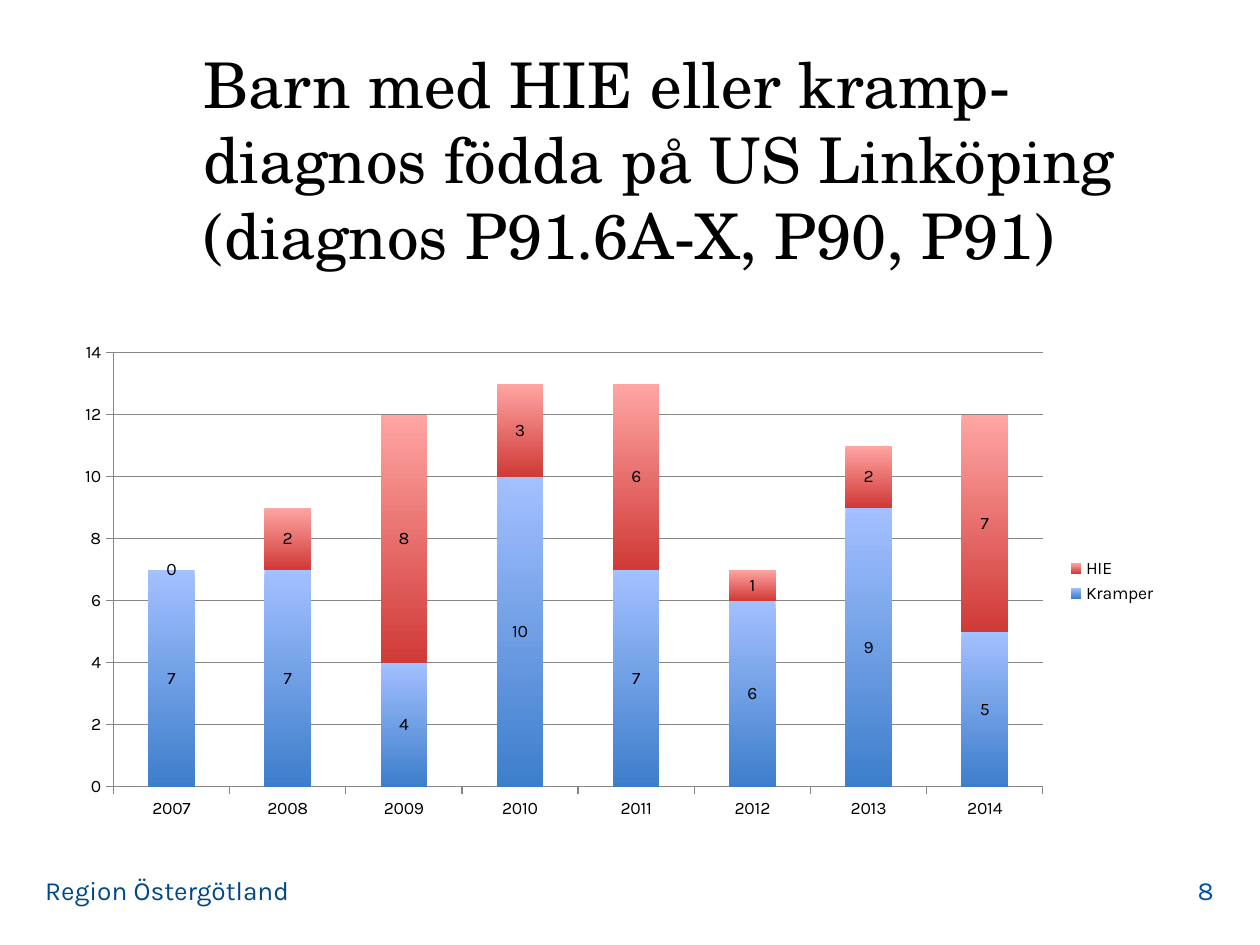
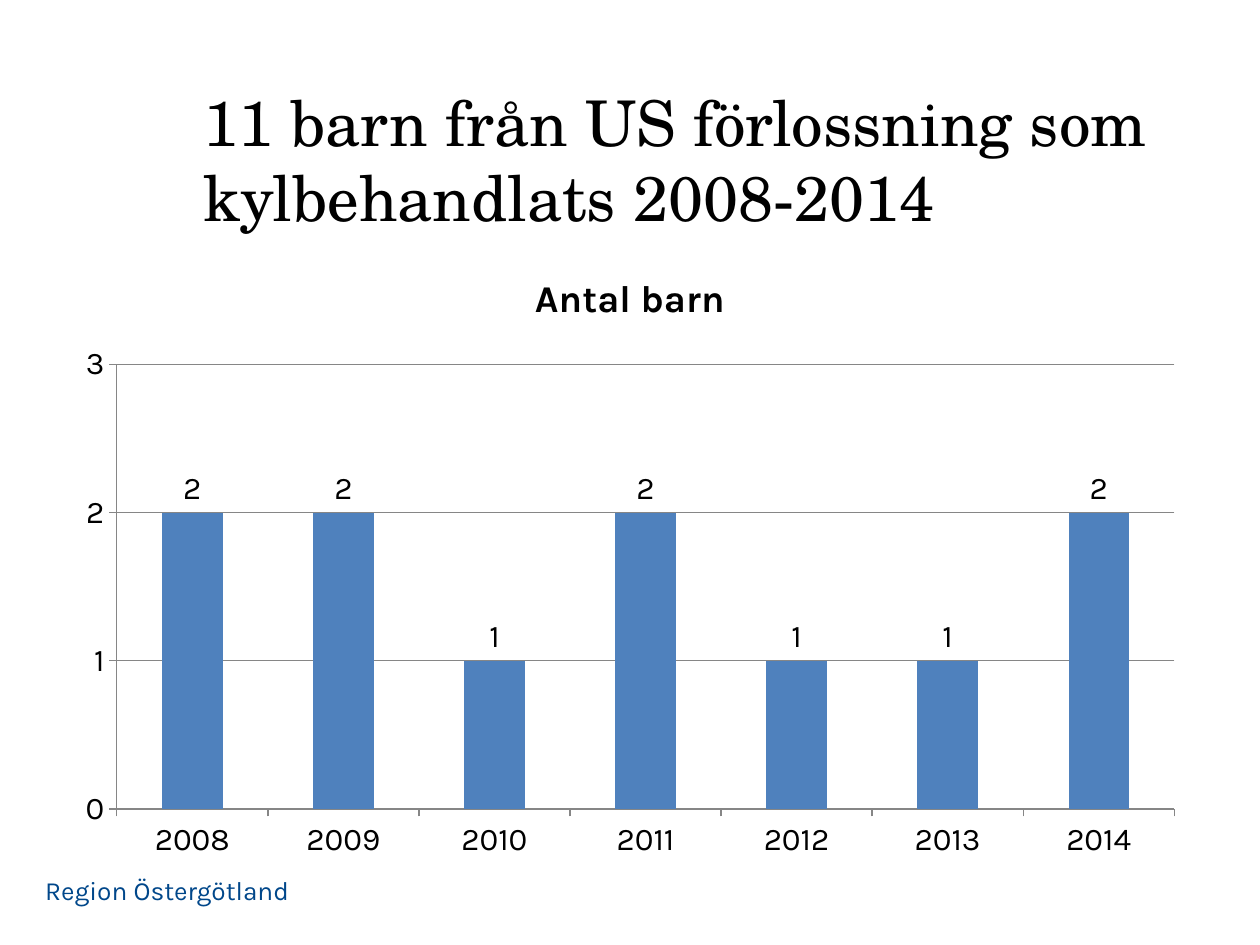
from pptx import Presentation
from pptx.chart.data import CategoryChartData
from pptx.dml.color import RGBColor
from pptx.enum import chart as ch, text
from pptx.util import Cm, Pt

BODY_FONT = "Karla"
TITLE_FONT = "TeX Gyre Schola"
BLACK = RGBColor(0x00, 0x00, 0x00)
FOOTER_BLUE = RGBColor(0x00, 0x47, 0x8A)
NUMBER_BLUE = RGBColor(0x00, 0x50, 0xA5)
AXIS_GREY = RGBColor(0x86, 0x86, 0x86)
BAR_BLUE = RGBColor(0x4F, 0x81, 0xBD)
BLUE_GRADIENT = (RGBColor(0xA3, 0xC0, 0xFF), RGBColor(0x3D, 0x7E, 0xCB))
RED_GRADIENT = (RGBColor(0xFF, 0xA5, 0xA3), RGBColor(0xD0, 0x3A, 0x37))


def style_font(font, name, size, color, bold=False):
    font.name = name
    font.size = Pt(size)
    font.bold = bold
    font.color.rgb = color


def add_label(slide, wording, box, color, align, anchor):
    frame = slide.shapes.add_textbox(*box).text_frame
    frame.word_wrap = True
    frame.vertical_anchor = anchor
    frame.text = wording
    paragraph = frame.paragraphs[0]
    paragraph.alignment = align
    style_font(paragraph.font, BODY_FONT, 15, color)


def add_titled_slide(prs, wording):
    slide = prs.slides.add_slide(prs.slide_layouts[5])
    title = slide.shapes.title
    title.left, title.top, title.width, title.height = Cm(3.84), Cm(1.45), Cm(19.71), Cm(3.5)
    frame = title.text_frame
    frame.text = wording
    frame.word_wrap = True
    frame.auto_size = text.MSO_AUTO_SIZE.NONE
    frame.vertical_anchor = text.MSO_ANCHOR.MIDDLE
    for paragraph in frame.paragraphs:
        paragraph.alignment = text.PP_ALIGN.LEFT
        style_font(paragraph.font, TITLE_FONT, 36, BLACK)
    add_label(slide, "Region Östergötland", (Cm(0.66), Cm(17.5), Cm(9.35), Cm(0.89)),
              FOOTER_BLUE, text.PP_ALIGN.LEFT, text.MSO_ANCHOR.TOP)
    return slide


def add_page_number(slide, number):
    add_label(slide, number, (Cm(23.32), Cm(17.37), Cm(1.4), Cm(1.02)),
              NUMBER_BLUE, text.PP_ALIGN.RIGHT, text.MSO_ANCHOR.BOTTOM)


def style_axis(axis):
    axis.major_tick_mark = ch.XL_TICK_MARK.OUTSIDE
    axis.minor_tick_mark = ch.XL_TICK_MARK.NONE
    axis.format.line.color.rgb = AXIS_GREY
    axis.format.line.width = Pt(0.75)


def add_column_chart(slide, kind, box, years, counts, size, top, step, label_position):
    data = CategoryChartData()
    data.categories = [str(year) for year in years]
    for name, values in counts.items():
        data.add_series(name, values)
    chart = slide.shapes.add_chart(kind, *box, data).chart
    style_font(chart.font, BODY_FONT, size, BLACK)
    chart.has_title = False
    chart.has_legend = False

    style_axis(chart.category_axis)
    counts_axis = chart.value_axis
    style_axis(counts_axis)
    counts_axis.minimum_scale = 0
    counts_axis.maximum_scale = top
    counts_axis.major_unit = step
    counts_axis.has_major_gridlines = True
    gridline = counts_axis.major_gridlines.format.line
    gridline.color.rgb = AXIS_GREY
    gridline.width = Pt(0.75)

    plot = chart.plots[0]
    plot.gap_width = 150
    plot.vary_by_categories = False
    for series in plot.series:
        series.invert_if_negative = False
        labels = series.data_labels
        labels.show_value = True
        labels.position = label_position
        style_font(labels.font, BODY_FONT, size, BLACK)
    return chart


def fill_gradient(series, colors):
    fill = series.format.fill
    fill.gradient()
    fill.gradient_angle = 270
    for stop, color in zip(fill.gradient_stops, colors):
        stop.color.rgb = color


def add_legend(chart):
    chart.has_legend = True
    chart.legend.position = ch.XL_LEGEND_POSITION.RIGHT
    chart.legend.include_in_layout = False
    style_font(chart.legend.font, BODY_FONT, 10, BLACK)


def add_chart_title(chart, wording):
    chart.has_title = True
    frame = chart.chart_title.text_frame
    frame.text = wording
    style_font(frame.paragraphs[0].font, BODY_FONT, 21.6, BLACK, bold=True)
    chart.chart_title.include_in_layout = False


def build_diagnoses(prs):
    slide = add_titled_slide(
        prs, "Barn med HIE eller kramp-diagnos födda på US Linköping\v(diagnos P91.6A-X, P90, P91)")
    add_page_number(slide, "8")
    diagnoses = {"Kramper": (7, 7, 4, 10, 7, 6, 9, 5), "HIE": (0, 2, 8, 3, 6, 1, 2, 7)}
    chart = add_column_chart(
        slide, ch.XL_CHART_TYPE.COLUMN_STACKED, (Cm(1.27), Cm(6.71), Cm(22.3), Cm(10)),
        range(2007, 2015), diagnoses, 10, 14, 2, ch.XL_LABEL_POSITION.CENTER)
    chart.plots[0].overlap = 100
    for series, colors in zip(chart.plots[0].series, (BLUE_GRADIENT, RED_GRADIENT)):
        fill_gradient(series, colors)
    add_legend(chart)


def build_cooling(prs):
    slide = add_titled_slide(prs, "11 barn från US förlossning som kylbehandlats 2008-2014")
    chart = add_column_chart(
        slide, ch.XL_CHART_TYPE.COLUMN_CLUSTERED, (Cm(1.27), Cm(4.98), Cm(22.86), Cm(12.57)),
        range(2008, 2015), {"Antal barn": (2, 2, 1, 2, 1, 1, 2)}, 18, 3, 1,
        ch.XL_LABEL_POSITION.OUTSIDE_END)
    fill = chart.plots[0].series[0].format.fill
    fill.solid()
    fill.fore_color.rgb = BAR_BLUE
    add_chart_title(chart, "Antal barn")


def main():
    prs = Presentation()
    prs.slide_width, prs.slide_height = Cm(25.4), Cm(19.05)
    build_diagnoses(prs)
    build_cooling(prs)
    prs.save("out.pptx")


if __name__ == "__main__":
    main()
